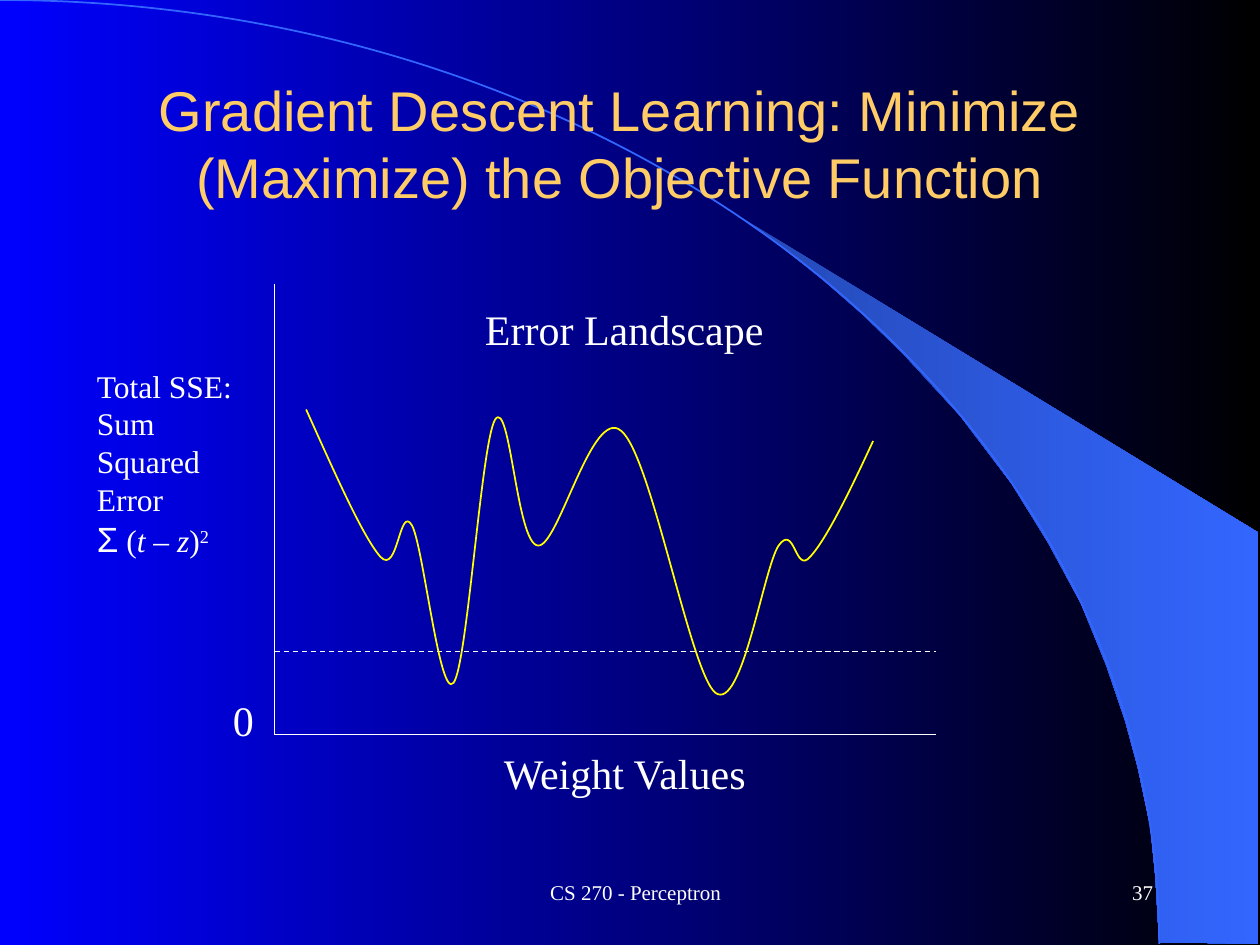
import pptx
import pptx.util
import pptx.dml.color
import pptx.enum.dml
import pptx.enum.shapes
import pptx.enum.text
import pptx.oxml
import pptx.oxml.ns

ANCHOR = pptx.enum.text.MSO_ANCHOR
ALIGN = pptx.enum.text.PP_ALIGN
SERIF, SANS = "Times New Roman", "Arial"
WHITE, BLUE, YELLOW, GOLD = "FFFFFF", "3366FF", "FFFF00", "FFCC66"

# Content; positions are in inches
TITLE = "Gradient Descent Learning: Minimize (Maximize) the Objective Function"
FOOTERS = [("CS 270 - Perceptron", 3.17, 3.75, ALIGN.CENTER),
           ("37", 7.17, 2.08, ALIGN.RIGHT)]
LABELS = [("0", 1.75, 5.46, 0.37),
          ("Error Landscape", 3.75, 2.36, 2.41),
          ("Weight Values", 3.9, 5.88, 2.19)]
SSE = [
    [("Total SSE:", {})],
    [("Sum Squared", {})],
    [("Error", {})],
    [("Σ", {"size": 20, "font": SANS}), (" (", {}), ("t – z", {"italic": True}),
     (")", {}), ("2", {"raised": True})],
]
LEFT, RIGHT, TOP, ZERO, LEVEL = 2.18, 7.43, 2.25, 5.83, 5.17
AXES = [(LEFT, TOP, LEFT, ZERO, False), (LEFT, ZERO, RIGHT, ZERO, False),
        (LEFT, LEVEL, RIGHT, LEVEL, True)]
BEAM = [(9.2, 7.48), (9.99, 7.49), (9.99, 4.23), (5.89, 1.73), (6.24, 1.99),
        (6.53, 2.22), (6.85, 2.5), (7.16, 2.8), (7.62, 3.3), (8.03, 3.84),
        (8.32, 4.31), (8.58, 4.79), (8.78, 5.28), (8.93, 5.72), (9.03, 6.09),
        (9.13, 6.56), (9.17, 6.96)]
# Bezier points: a start, then two handles and an end for each segment
ARC = [(0, 0), (5.08, 0), (9.2, 3.35), (9.2, 7.49)]
ERROR_CURVE = [
    (2.43, 3.25), (2.66, 3.76), (2.88, 4.26), (3.02, 4.42),
    (3.16, 4.57), (3.17, 4), (3.27, 4.17), (3.36, 4.33), (3.49, 5.56), (3.6, 5.42),
    (3.71, 5.28), (3.82, 3.51), (3.93, 3.33), (4.05, 3.15), (4.1, 4.32), (4.27, 4.33),
    (4.43, 4.35), (4.7, 3.22), (4.93, 3.42), (5.17, 3.61), (5.48, 5.35), (5.68, 5.5),
    (5.89, 5.65), (6.06, 4.51), (6.18, 4.33), (6.31, 4.15), (6.31, 4.56), (6.43, 4.42),
    (6.56, 4.28), (6.75, 3.89), (6.93, 3.5),
]


def inch(v):
    return pptx.util.Cm(v * 2.54)


def rgb(hex_color):
    return pptx.dml.color.RGBColor.from_string(hex_color)


def add_run(p, text, size=18, font=SERIF, color=WHITE, italic=False, raised=False):
    r = p.add_run()
    r.text = text
    r.font.size = pptx.util.Pt(size)
    r.font.name = font
    r.font.color.rgb = rgb(color)
    r.font.italic = italic
    if raised:
        r.font._element.set("baseline", "30000")


def add_box(s, x, y, w, h, wrap=True, anchor=ANCHOR.TOP):
    tf = s.shapes.add_textbox(*map(inch, (x, y, w, h))).text_frame
    tf.word_wrap = wrap
    tf.vertical_anchor = anchor
    return tf


def set_gradient(fill, start, end):
    fill.gradient()
    fill.gradient_angle = 0
    for stop, color, position in zip(fill.gradient_stops, (start, end), (0, 1)):
        stop.color.rgb = rgb(color)
        stop.position = position


def add_outline(s, points, close=False):
    emu = [(inch(x), inch(y)) for x, y in points]
    builder = s.shapes.build_freeform(*emu[0])
    builder.add_line_segments(emu[1:], close=close)
    sp = builder.convert_to_shape()
    sp.shadow.inherit = False
    return sp


def add_curve(s, points, color):
    sp = add_outline(s, points)
    sp.fill.background()
    sp.line.color.rgb = rgb(color)
    sp.line.width = pptx.util.Pt(1)
    # Join each three straight steps into one Bezier segment
    path = sp._element.find(".//" + pptx.oxml.ns.qn("a:path"))
    steps = path.findall(pptx.oxml.ns.qn("a:lnTo"))
    for i in range(0, len(steps), 3):
        bezier = pptx.oxml.parse_xml(
            "<a:cubicBezTo %s/>" % pptx.oxml.ns.nsdecls("a"))
        for step in steps[i:i + 3]:
            bezier.append(step[0])
            path.remove(step)
        path.append(bezier)


def add_line(s, x1, y1, x2, y2, dashed):
    c = s.shapes.add_connector(pptx.enum.shapes.MSO_CONNECTOR.STRAIGHT,
                               *map(inch, (x1, y1, x2, y2)))
    c.line.color.rgb = rgb(WHITE)
    c.line.width = pptx.util.Pt(0.75)
    if dashed:
        c.line.dash_style = pptx.enum.dml.MSO_LINE.DASH
    c._element.spPr.append(pptx.oxml.parse_xml(
        "<a:effectLst %s/>" % pptx.oxml.ns.nsdecls("a")))


def main():
    prs = pptx.Presentation()
    prs.slide_width, prs.slide_height = inch(10), inch(7.5)
    s = prs.slides.add_slide(prs.slide_layouts[5])

    # Background, beam and arc
    set_gradient(s.background.fill, "0000FF", "000000")
    beam = add_outline(s, BEAM, close=True)
    set_gradient(beam.fill, "2449B6", BLUE)
    beam.line.fill.background()
    add_curve(s, ARC, BLUE)

    # Title, brought in front of the decoration
    title = s.shapes.title
    title.left, title.top, title.width, title.height = map(inch, (0.67, 0.67, 8.5, 0.92))
    tf = title.text_frame
    tf.word_wrap = True
    tf.auto_size = pptx.enum.text.MSO_AUTO_SIZE.NONE
    tf.vertical_anchor = ANCHOR.MIDDLE
    tf.paragraphs[0].alignment = ALIGN.CENTER
    add_run(tf.paragraphs[0], TITLE, size=32, font=SANS, color=GOLD)
    s.shapes._spTree.append(title._element)

    # Footer and slide number
    for text, x, w, align in FOOTERS:
        p = add_box(s, x, 6.83, w, 0.5, anchor=ANCHOR.MIDDLE).paragraphs[0]
        p.alignment = align
        add_run(p, text, size=12)

    # Error landscape
    for axis in AXES:
        add_line(s, *axis)
    add_curve(s, ERROR_CURVE, YELLOW)

    # Labels
    tf = add_box(s, 0.67, 2.86, 1.52, 1.65)
    for i, runs in enumerate(SSE):
        p = tf.add_paragraph() if i else tf.paragraphs[0]
        for text, style in runs:
            add_run(p, text, **style)
    for text, x, y, w in LABELS:
        add_run(add_box(s, x, y, w, 0.5, wrap=False).paragraphs[0], text, size=24)

    prs.save("out.pptx")


if __name__ == "__main__":
    main()
